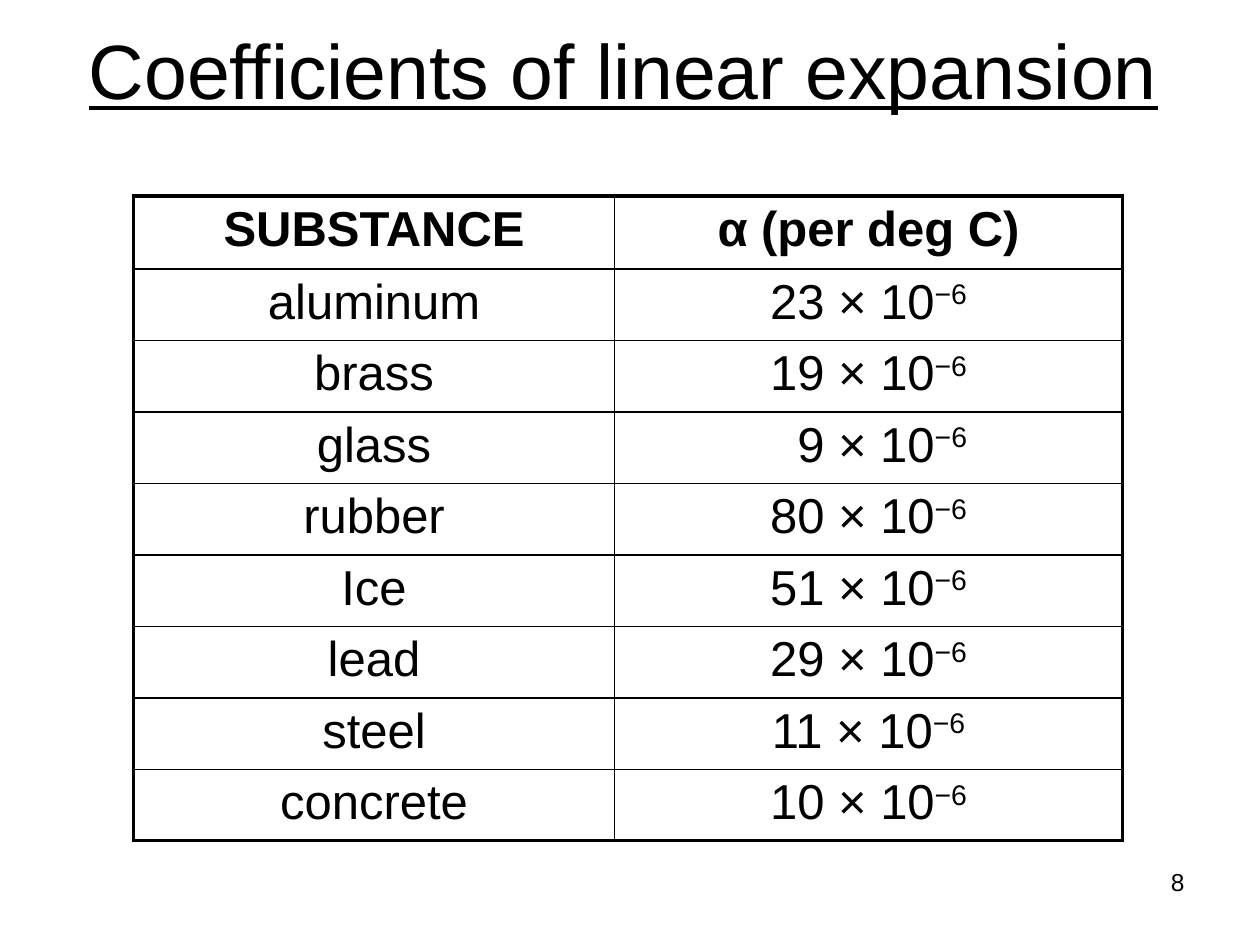
from pptx import Presentation, util as u
from pptx.dml.color import RGBColor
from pptx.enum import text as t
from pptx.oxml import parse_xml
from pptx.oxml.ns import nsdecls

TITLE = "Coefficients of linear expansion"
HEADS = ("SUBSTANCE", "α (per deg C)")
POWER = "−6"
DATA = [
    ("aluminum", 23),
    ("brass", 19),
    ("glass", 9),
    ("rubber", 80),
    ("Ice", 51),
    ("lead", 29),
    ("steel", 11),
    ("concrete", 10),
]
PAGE = "8"

THEME = {"font": "Arial", "ink": "000000", "title": 44, "body": 28, "page": 14,
         "thick": 2.25, "thin": 1}
COLS = (9.7, 10.24)
HEAD_H, ROW_H = 1.47, 1.44
DIGIT = 0.55  # width of one body digit, in cm


def write(par, words, size="body", align="CENTER", bold=False, line=False, base=0):
    """Add a run to a paragraph; base is the raise of a superscript in percent."""
    par.alignment = getattr(t.PP_ALIGN, align)
    run = par.add_run()
    run.text = words
    font = run.font
    font.name, font.size = THEME["font"], u.Pt(THEME[size])
    font.bold, font.underline = bold, line
    font.color.rgb = RGBColor.from_string(THEME["ink"])
    if base:
        font._element.set("baseline", str(base * 1000))


def label(slide, words, box, anchor, **form):
    frame = slide.shapes.add_textbox(*map(u.Cm, box)).text_frame
    frame.word_wrap = True
    frame.vertical_anchor = anchor
    write(frame.paragraphs[0], words, **form)


def edge(cell, **outer):
    """Rule all four sides, thick where the side is on the table's rim."""
    props = cell._tc.get_or_add_tcPr()
    for i, side in enumerate("LRTB"):
        width = u.Pt(THEME["thick" if outer[side] else "thin"])
        props.insert(i, parse_xml(
            f'<a:ln{side} {nsdecls("a")} w="{width}"><a:solidFill>'
            f'<a:srgbClr val="{THEME["ink"]}"/></a:solidFill></a:ln{side}>'))


def grid(slide):
    count = len(DATA) + 1
    table = slide.shapes.add_table(
        count, len(COLS), u.Cm(2.69), u.Cm(3.95), u.Cm(sum(COLS)),
        u.Cm(HEAD_H + ROW_H * len(DATA))).table
    for col, width in zip(table.columns, COLS):
        col.width = u.Cm(width)
    for r, row in enumerate(table.rows):
        row.height = u.Cm(ROW_H if r else HEAD_H)
        for c, cell in enumerate(row.cells):
            cell.fill.background()
            edge(cell, L=c == 0, R=c == len(COLS) - 1, T=r == 0, B=r == count - 1)
            par = cell.text_frame.paragraphs[0]
            if r == 0:
                write(par, HEADS[c], bold=True)
            elif c == 0:
                write(par, DATA[r - 1][0])
            else:
                value = DATA[r - 1][1]
                write(par, f"{value} × 10")
                write(par, POWER, base=30)
                if value < 10:
                    cell.margin_left += u.Cm(DIGIT)


def main():
    deck = Presentation()
    deck.slide_width, deck.slide_height = u.Cm(25.4), u.Cm(19.05)
    slide = deck.slides.add_slide(deck.slide_layouts[6])
    label(slide, TITLE, (1.14, 0, 22.86, 2.79), t.MSO_ANCHOR.MIDDLE,
          size="title", line=True)
    grid(slide)
    label(slide, PAGE, (18.21, 17.35, 5.92, 1.32), t.MSO_ANCHOR.TOP,
          size="page", align="RIGHT")
    deck.save("out.pptx")


if __name__ == "__main__":
    main()
